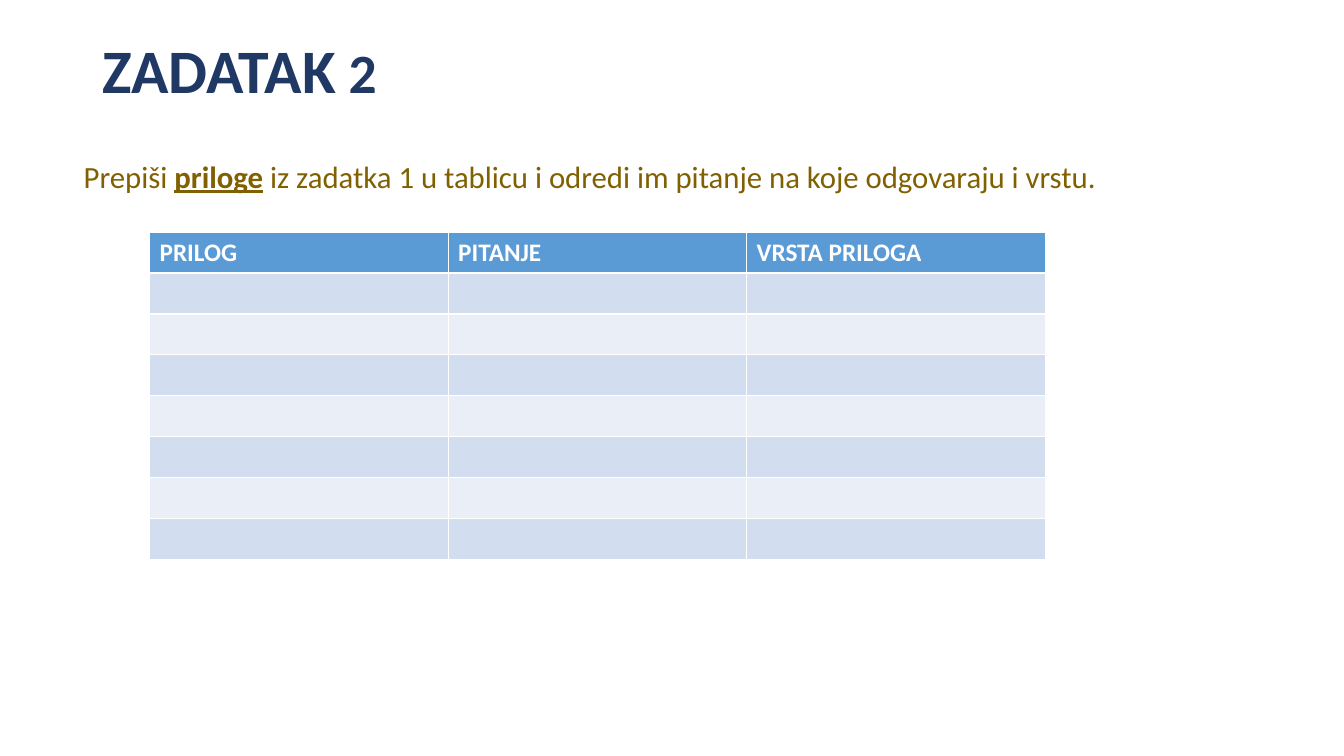
"""Build a worksheet slide with a task line and an empty answer table."""
import pptx
import pptx.dml.color
import pptx.enum.text
import pptx.util

Cm = pptx.util.Cm
Pt = pptx.util.Pt

NAVY, OLIVE, WHITE = "203864", "806000", "FFFFFF"
BLUE, BANDS = "5B9BD5", ("D2DEEF", "EAEFF7")
HEADS = ("PRILOG", "PITANJE", "VRSTA PRILOGA")
ROWS = 8


def color(code):
    """Turn a hex string into a colour."""
    return pptx.dml.color.RGBColor.from_string(code)


def apply(item, form):
    """Set each attribute of item from a dict of format values."""
    for name, value in form.items():
        setattr(item, name, value)


def add_run(para, text, size, code, **form):
    """Add one formatted run to a paragraph."""
    run = para.add_run()
    run.text = text
    apply(run.font, {"name": "Calibri", "size": Pt(size), **form})
    run.font.color.rgb = color(code)


def add_text(slide, area, anchor, runs, **form):
    """Add a wrapped text box holding one paragraph of runs."""
    frame = slide.shapes.add_textbox(*map(Cm, area)).text_frame
    apply(frame, {"word_wrap": True, "vertical_anchor": anchor})
    para = frame.paragraphs[0]
    apply(para, {"line_spacing": 0.9, **form})
    for text, size, code, style in runs:
        add_run(para, text, size, code, **style)


def add_grid(slide, area, heads, rows):
    """Add a table with a header row and banded empty rows."""
    grid = slide.shapes.add_table(rows, len(heads), *map(Cm, area)).table
    for row in range(rows):
        for col, head in enumerate(heads):
            cell = grid.cell(row, col)
            cell.fill.solid()
            cell.fill.fore_color.rgb = color(BANDS[(row - 1) % 2] if row else BLUE)
            if row == 0:
                add_run(cell.text_frame.paragraphs[0], head, 18, WHITE, bold=True)


def main():
    """Build and save the slide."""
    deck = pptx.Presentation()
    apply(deck, {"slide_width": Cm(33.87), "slide_height": Cm(19.05)})
    slide = deck.slides.add_slide(deck.slide_layouts[6])
    anchor = pptx.enum.text.MSO_ANCHOR
    bold = {"bold": True}
    add_text(slide, (2.33, 1.01, 29.21, 1.7), anchor.MIDDLE, [
        ("ZADATAK", 44.1, NAVY, bold),
        (" 2", 39.6, NAVY, bold),
    ])
    add_text(slide, (1.86, 3.96, 28.37, 12.01), anchor.TOP, [
        ("Prepiši ", 22, OLIVE, {}),
        ("priloge", 22, OLIVE, {"bold": True, "underline": True}),
        (" iz zadatka 1 u tablicu i odredi im pitanje na koje odgovaraju i vrstu.",
         22, OLIVE, {}),
    ], space_before=Pt(10))
    add_grid(slide, (3.77, 5.85, 22.57, 8.24), HEADS, ROWS)
    deck.save("out.pptx")


if __name__ == "__main__":
    main()
